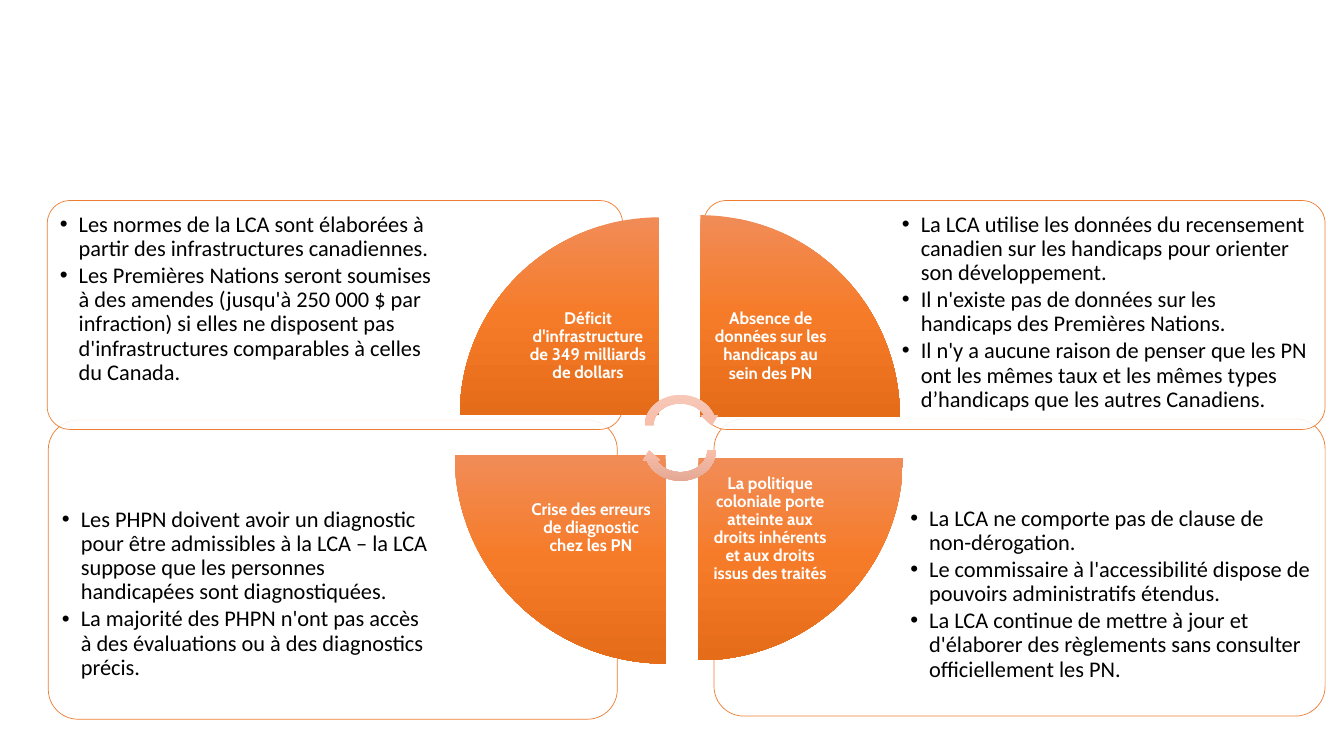
import lxml.etree
import pptx
import pptx.dml.color
import pptx.enum.shapes
import pptx.enum.text
import pptx.oxml
import pptx.oxml.ns
import pptx.util

PX = 9525
THEME = {
    "outline": "ED7D31",
    "panel": "FFFFFF",
    "wedge": ("F18C57", "F67B28", "E56C19"),
    "arrow": ("F7C9BA", "F8BEAA", "E2A692"),
    "detail": {"font": "Calibri", "size": 16, "color": "000000", "bold": False},
    "label": {"font": "Cabin", "size": 12, "color": "FFFFFF", "bold": True},
}
SHAPES = pptx.enum.shapes.MSO_SHAPE
ALIGN = pptx.enum.text.PP_ALIGN
ANCHOR = pptx.enum.text.MSO_ANCHOR
RGB = pptx.dml.color.RGBColor.from_string
qn = pptx.oxml.ns.qn

presentation = pptx.Presentation()
presentation.slide_width = 1280 * PX
presentation.slide_height = 720 * PX
slide = presentation.slides.add_slide(presentation.slide_layouts[6])


def add_text(box, paragraphs, style, inset, bulleted):
    frame = slide.shapes.add_textbox(*(n * PX for n in box)).text_frame
    frame.word_wrap = True
    frame.margin_left = frame.margin_right = inset * PX
    frame.margin_top = frame.margin_bottom = inset * PX
    frame.vertical_anchor = ANCHOR.TOP if bulleted else ANCHOR.MIDDLE
    for index, wording in enumerate(paragraphs):
        paragraph = frame.add_paragraph() if index else frame.paragraphs[0]
        if bulleted:
            properties = paragraph._p.get_or_add_pPr()
            properties.set("marL", str(18 * PX))
            properties.set("indent", str(-18 * PX))
            lxml.etree.SubElement(properties, qn("a:buFont"), typeface="Arial")
            lxml.etree.SubElement(properties, qn("a:buChar"), char="•")
            paragraph.space_after = pptx.util.Pt(2)
        paragraph.alignment = ALIGN.LEFT if bulleted else ALIGN.CENTER
        paragraph.line_spacing = 0.9
        run = paragraph.add_run()
        run.text = wording
        run.font.name = style["font"]
        run.font.size = pptx.util.Pt(style["size"])
        run.font.bold = style["bold"]
        run.font.color.rgb = RGB(style["color"])


def add_gradient_shape(kind, box, rotation, colors):
    shape = slide.shapes.add_shape(kind, *(n * PX for n in box))
    shape.shadow.inherit = False
    shape.rotation = rotation
    shape.line.fill.background()
    stops = "".join(
        f'<a:gs pos="{index * 50000}"><a:srgbClr val="{color}"/></a:gs>'
        for index, color in enumerate(colors)
    )
    gradient = pptx.oxml.parse_xml(
        f'<a:gradFill {pptx.oxml.ns.nsdecls("a")} rotWithShape="0">'
        f'<a:gsLst>{stops}</a:gsLst><a:lin ang="5400000" scaled="0"/></a:gradFill>'
    )
    shape._element.spPr.find(qn("a:prstGeom")).addnext(gradient)


panels = [
    ((680, 399, 582, 283), (860, 476, 395, 201), [
        "La LCA ne comporte pas de clause de non-dérogation.",
        "Le commissaire à l'accessibilité dispose de pouvoirs administratifs étendus.",
        "La LCA continue de mettre à jour et d'élaborer des règlements sans consulter officiellement les PN.",
    ]),
    ((46, 400, 542, 285), (52, 477, 367, 201), [
        "Les PHPN doivent avoir un diagnostic pour être admissibles à la LCA – la LCA suppose que les personnes handicapées sont diagnostiquées.",
        "La majorité des PHPN n'ont pas accès à des évaluations ou à des diagnostics précis.",
    ]),
    ((670, 191, 592, 218), (852, 196, 405, 154), [
        "La LCA utilise les données du recensement canadien sur les handicaps pour orienter son développement.",
        "Il n'existe pas de données sur les handicaps des Premières Nations.",
        "Il n'y a aucune raison de penser que les PN ont les mêmes taux et les mêmes types d’handicaps que les autres Canadiens.",
    ]),
    ((45, 191, 548, 218), (50, 196, 374, 154), [
        "Les normes de la LCA sont élaborées à partir des infrastructures canadiennes.",
        "Les Premières Nations seront soumises à des amendes (jusqu'à 250 000 $ par infraction) si elles ne disposent pas d'infrastructures comparables à celles du Canada.",
    ]),
]
for panel_box, detail_box, details in panels:
    panel = slide.shapes.add_shape(SHAPES.ROUNDED_RECTANGLE, *(n * PX for n in panel_box))
    panel.shadow.inherit = False
    panel.adjustments[0] = 0.1
    panel.fill.solid()
    panel.fill.fore_color.rgb = RGB(THEME["panel"])
    panel_color = panel._element.spPr.find(qn("a:solidFill"))[0]
    lxml.etree.SubElement(panel_color, qn("a:alpha"), val="90000")
    panel.line.color.rgb = RGB(THEME["outline"])
    panel.line.width = pptx.util.Pt(0.5)
    add_text(detail_box, details, THEME["detail"], 7, True)

wedges = [
    ((438, 207, 190, 188), (493, 263, 134, 133),
     "Déficit d'infrastructure de 349 milliards de dollars"),
    ((666, 206, 192, 190), (667, 262, 134, 136),
     "Absence de données sur les handicaps au sein des PN"),
    ((665, 436, 195, 193), (665, 436, 137, 136),
     "La politique coloniale porte atteinte aux droits inhérents et aux droits issus des traités"),
    ((434, 432, 199, 201), (492, 433, 142, 140),
     "Crise des erreurs de diagnostic chez les PN"),
]
for quarter, (wedge_box, label_box, label) in enumerate(wedges):
    add_gradient_shape(SHAPES.PIE_WEDGE, wedge_box, quarter * 90, THEME["wedge"])
    add_text(label_box, [label], THEME["label"], 9, False)

for arrow_top, rotation in ((372, 0), (396, 180)):
    add_gradient_shape(SHAPES.CIRCULAR_ARROW, (610, arrow_top, 76, 66), rotation, THEME["arrow"])

presentation.save("out.pptx")
